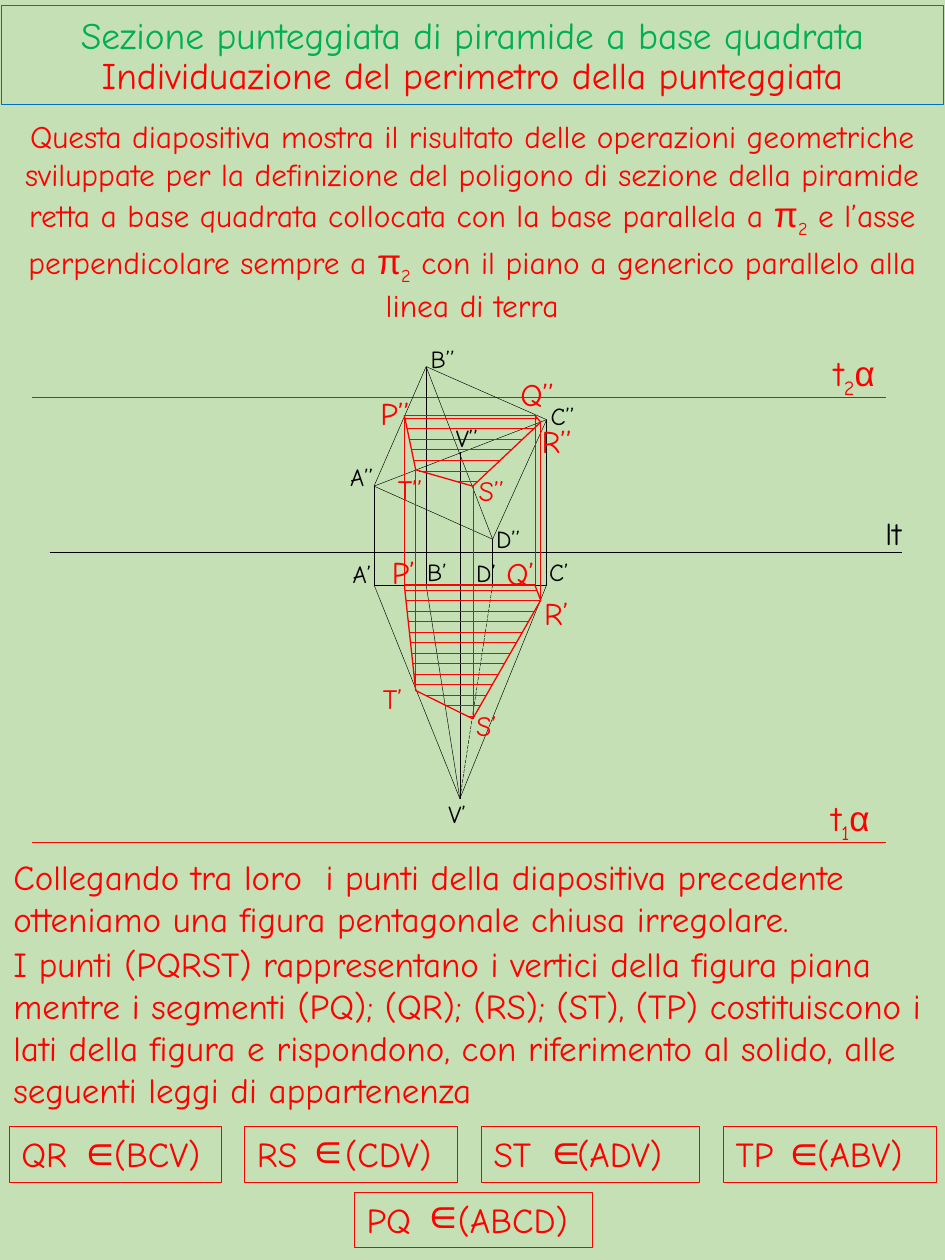
from lxml import etree
from pptx import Presentation
from pptx import util as u
from pptx.dml.color import RGBColor
from pptx.enum import dml, shapes, text
from pptx.oxml import ns

THEME = {
    "font": "Comic Neue", "symbols": "Arial",
    "background": "C5E0B4", "black": "000000", "red": "FF0000",
    "green": "00B050", "blue": "0070C0",
    "title": 21.4, "body": 18, "large": 20, "symbol": 24,
    "point": 14, "section": 16, "vertex": 18,
    "thin": 0.25, "bold": 0.75,
}

TITLE = [("Sezione punteggiata di piramide a base quadrata ", {"color": "green"}),
         ("Individuazione del perimetro della punteggiata", {})]
PI = ("π", {"font": "symbols", "size": "large"})
PI_INDEX = ("2", {"sub": True})
INTRO = [("Questa diapositiva mostra il risultato delle operazioni geometriche "
          "sviluppate per la definizione del poligono di sezione della piramide "
          "retta a base quadrata collocata con la base parallela a ", {}),
         PI, PI_INDEX, (" e l’asse perpendicolare sempre a ", {}), PI, PI_INDEX,
         (" con il piano a generico parallelo alla linea di terra", {})]
CLOSING = [
    ((0.02, 17.12, 19, 1.96),
     "Collegando tra loro  i punti della diapositiva precedente "
     "otteniamo una figura pentagonale chiusa irregolare."),
    ((0.02, 18.87, 19, 3.68),
     "I punti (PQRST) rappresentano i vertici della figura piana mentre i "
     "segmenti (PQ); (QR); (RS); (ST), (TP) costituiscono i lati della figura e "
     "rispondono, con riferimento al solido, alle seguenti leggi di appartenenza"),
]
MEMBERSHIPS = [
    ("QR", "(BCV)", (0.18, 22.71, 4.29), (1.35, 22.53), 1.87),
    ("PQ", "(ABCD)", (7.14, 24.03, 4.8), (8.26, 23.8), 1.84),
    ("RS", "(CDV)", (4.93, 22.71, 4.29), (5.94, 22.48), 1.78),
    ("ST", "(ADV)", (9.7, 22.71, 4.39), (10.74, 22.5), 1.69),
    ("TP", "(ABV)", (14.58, 22.71, 4.29), (15.54, 22.53), 1.65),
]

FRONT, PLAN = "’", "’’"
POINTS = {
    PLAN: {"A": (7.54, 9.8), "B": (8.59, 7.39), "C": (11.02, 8.46),
           "D": (9.93, 10.87), "V": (9.27, 9.12), "P": (8.15, 8.37),
           "Q": (10.78, 8.37), "R": (10.9, 8.51), "S": (9.53, 9.8),
           "T": (8.38, 9.47)},
    FRONT: {"A": (7.54, 11.79), "B": (8.59, 11.79), "C": (11.02, 11.79),
            "D": (9.93, 11.79), "V": (9.27, 16.1), "P": (8.15, 11.79),
            "Q": (10.78, 11.79), "R": (10.9, 12.1), "S": (9.53, 14.49),
            "T": (8.38, 13.92)},
}
SOLID_EDGES = {PLAN: "AB BC CD DA AC BD", FRONT: "AC AV BV CV DV"}
HIDDEN_EDGE = (FRONT, "DV")
SECTION = "PQRST"
HATCH = {PLAN: (8.43, 7), FRONT: (11.89, 13)}
HATCH_STEP = 0.212
TRACES = [((1, 11.13), (18.19, 11.13), "black"),
          ((0.64, 8), (17.86, 8), "red"),
          ((0.64, 16.97), (17.86, 16.97), "red")]
TRACE_NAMES = [("2", (16.56, 6.96, 1.65, 1.12)), ("1", (16.51, 15.93, 1.65, 1.12))]
GROUND_LINE = ("lt", (17.6, 10.24, 1.45, 1.02))

SOLID_LABELS = {
    "A’’": (6.81, 9.19, 1.3), "A’": (6.86, 11.15, 1), "B’": (8.36, 11.1, 1),
    "B’’": (8.43, 6.81, 1.3), "C’’": (10.85, 7.95, 1), "C’": (10.82, 11.1, 1),
    "V’": (8.79, 15.98, 1), "V’’": (8.94, 8.41, 1.3), "D’’": (9.75, 10.44, 1.3),
    "D’": (9.35, 11.13, 1),
}
SECTION_LABELS = {
    "section": {"S’’": (9.4, 9.42, 1.2, 0.94), "S’": (9.35, 14.15, 1.2, 0.94),
                "T’": (7.47, 13.61, 1, 0.94), "T’’": (7.77, 9.4, 1.1, 0.94)},
    "vertex": {"R’": (10.72, 11.84, 1.1, 1.02), "R’’": (10.67, 8.38, 1.2, 1),
               "P’’": (7.42, 8.03, 1.1, 0.6), "P’": (7.65, 11.02, 1.1, 1.02),
               "Q’’": (10.24, 7.54, 1.3, 0.8), "Q’": (9.96, 11.05, 1.3, 1.02)},
}


def rgb(name):
    return RGBColor.from_string(THEME[name])


def add_line(slide, start, end, color="black", weight="thin", dashed=False):
    line = slide.shapes.add_connector(
        shapes.MSO_CONNECTOR.STRAIGHT, *(u.Cm(v) for v in (*start, *end)))
    line.line.color.rgb = rgb(color)
    line.line.width = u.Pt(THEME[weight])
    if dashed:
        line.line.dash_style = dml.MSO_LINE.LONG_DASH
    etree.SubElement(line._element.spPr, ns.qn("a:effectLst"))


def write(shape, runs, size, color="red", font="font", align=text.PP_ALIGN.LEFT,
          anchor=text.MSO_ANCHOR.TOP, wrap=True, grow=True):
    frame = shape.text_frame
    frame.word_wrap = wrap
    frame.vertical_anchor = anchor
    frame.auto_size = (text.MSO_AUTO_SIZE.SHAPE_TO_FIT_TEXT if grow
                       else text.MSO_AUTO_SIZE.NONE)
    paragraph = frame.paragraphs[0]
    paragraph.alignment = align
    paragraph.font.size = u.Pt(THEME[size])
    paragraph.font.name = THEME[font]
    paragraph.font.color.rgb = rgb(color)
    for words, style in [(runs, {})] if isinstance(runs, str) else runs:
        run = paragraph.add_run()
        run.text = words
        if "size" in style:
            run.font.size = u.Pt(THEME[style["size"]])
        if "font" in style:
            run.font.name = THEME[style["font"]]
        if "color" in style:
            run.font.color.rgb = rgb(style["color"])
        if "sub" in style:
            run.font._element.set("baseline", "-25000")
    return paragraph


def add_text(parent, at, runs, size, **style):
    label = parent.shapes.add_textbox(*(u.Cm(v) for v in at))
    return write(label, runs, size, **style)


def add_frame(parent, at, color):
    frame = parent.shapes.add_shape(
        shapes.MSO_SHAPE.RECTANGLE, *(u.Cm(v) for v in at))
    frame.shadow.inherit = False
    frame.fill.background()
    frame.line.color.rgb = rgb(color)
    frame.line.width = u.Pt(THEME["thin"])
    return frame


def hatch_span(outline, y):
    crossings = []
    for (x1, y1), (x2, y2) in zip(outline, outline[1:] + outline[:1]):
        if min(y1, y2) <= y < max(y1, y2):
            crossings.append(x1 + (x2 - x1) * (y - y1) / (y2 - y1))
    return (min(crossings), y), (max(crossings), y)


def draw_projections(slide):
    for start, end, color in TRACES:
        add_line(slide, start, end, color)
    for view, edges in SOLID_EDGES.items():
        for edge in edges.split():
            add_line(slide, *(POINTS[view][p] for p in edge),
                     dashed=(view, edge) == HIDDEN_EDGE)
    for point in POINTS[PLAN]:
        add_line(slide, POINTS[PLAN][point], POINTS[FRONT][point],
                 "red" if point in SECTION else "black")
    for view, (top, count) in HATCH.items():
        outline = [POINTS[view][p] for p in SECTION]
        for start, end in zip(outline, outline[1:] + outline[:1]):
            add_line(slide, start, end, "red", "bold")
        for row in range(count):
            add_line(slide, *hatch_span(outline, top + row * HATCH_STEP), "red")


def draw_labels(slide):
    for index, at in TRACE_NAMES:
        add_text(slide, at, [("t", {}), (index, {"sub": True}),
                             ("α", {"font": "symbols"})], "large")
    add_text(slide, GROUND_LINE[1], GROUND_LINE[0], "body", color="black")
    for name, at in SOLID_LABELS.items():
        add_text(slide, (*at, 0.86), name, "point", color="black")
    for size, labels in SECTION_LABELS.items():
        for name, at in labels.items():
            add_text(slide, at, name, size, anchor=text.MSO_ANCHOR.MIDDLE)


def draw_membership(slide, side, face, at, symbol_at, tab):
    group = slide.shapes.add_group_shape()
    law = write(add_frame(group, (*at, 1.12), "red"), f"{side}\t{face}", "large")
    stops = etree.Element(ns.qn("a:tabLst"))
    etree.SubElement(stops, ns.qn("a:tab"), pos=str(u.Cm(tab)), algn="l")
    law.font._element.addprevious(stops)
    add_text(group, (*symbol_at, 1.12, 1.27), "∈", "symbol",
             font="symbols", wrap=False)


def main():
    deck = Presentation()
    deck.slide_width, deck.slide_height = u.Cm(19.05), u.Cm(25.4)
    slide = deck.slides.add_slide(deck.slide_layouts[6])
    slide.background.fill.solid()
    slide.background.fill.fore_color.rgb = rgb("background")

    draw_projections(slide)
    draw_labels(slide)
    heading = write(add_frame(slide, (0.02, 0.1, 19, 2), "blue"), TITLE, "title",
                    align=text.PP_ALIGN.CENTER, anchor=text.MSO_ANCHOR.BOTTOM,
                    grow=False)
    heading.line_spacing = 0.9
    add_text(slide, (0.02, 2.24, 19, 4.19), INTRO, "body",
             align=text.PP_ALIGN.CENTER)
    for at, words in CLOSING:
        add_text(slide, at, words, "large")
    for membership in MEMBERSHIPS:
        draw_membership(slide, *membership)
    deck.save("out.pptx")


if __name__ == "__main__":
    main()
